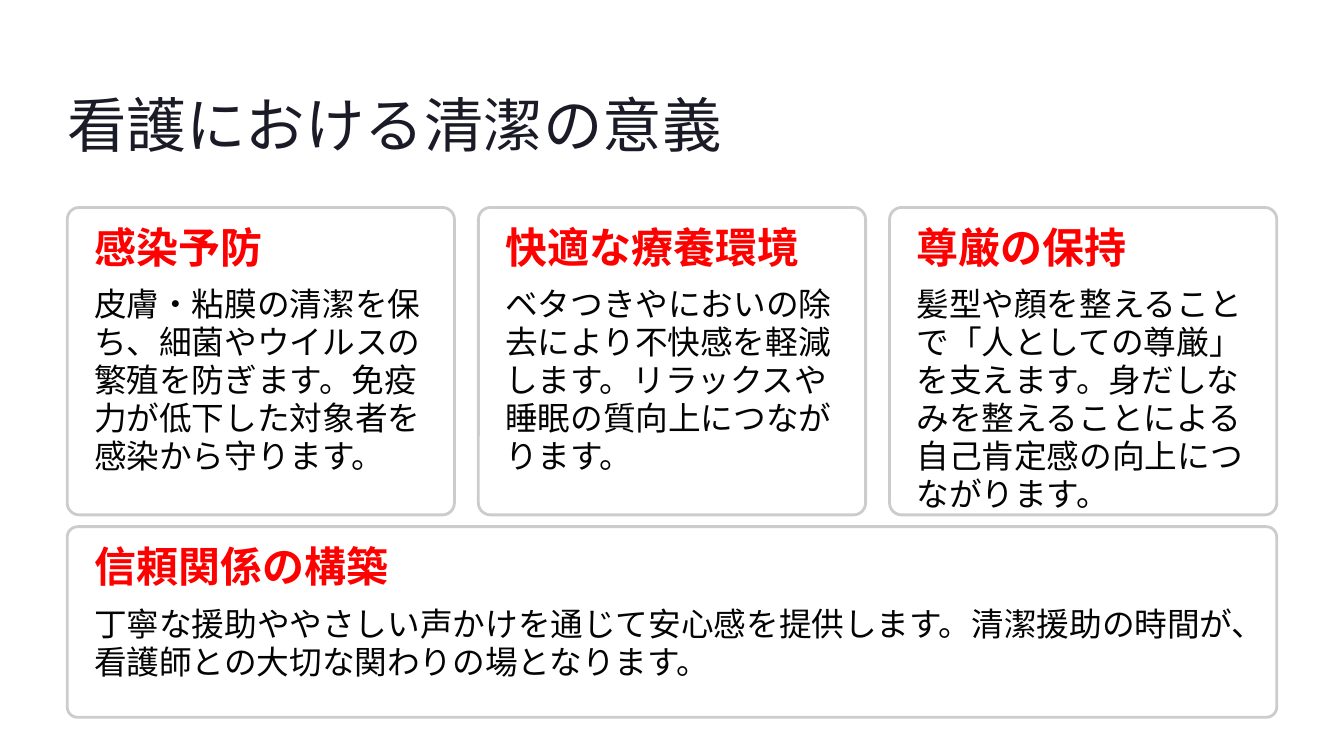
from dataclasses import dataclass
from lxml.etree import SubElement
from pptx import Presentation
from pptx.dml.color import RGBColor
from pptx.enum.shapes import MSO_SHAPE
from pptx.oxml.ns import qn
from pptx.util import Inches, Pt


@dataclass
class Theme:
    ink: str = "1B1B27"
    red: str = "FF0000"
    body: str = "030303"
    edge: str = "CCCCCC"
    card: str = "FFFFFF"
    title_size: int = 51
    head_size: int = 36
    body_size: int = 28
    head_font: str = "Inter"
    body_font: str = "Karla"


theme = Theme()
deck = Presentation()
deck.slide_width, deck.slide_height = Inches(16), Inches(9)
slide = deck.slides.add_slide(deck.slide_layouts[6])


def add_text(text, left, top, width, height, font, size, color, lead, bold=False, wrap=False):
    box = slide.shapes.add_textbox(Inches(left), Inches(top), Inches(width), Inches(height))
    frame = box.text_frame
    frame.margin_left = frame.margin_top = frame.margin_right = frame.margin_bottom = 0
    frame.word_wrap = wrap
    frame.text = text
    line = frame.paragraphs[0]
    line.line_spacing = Pt(lead)
    style = line.runs[0].font
    style.name, style.size, style.bold = font, Pt(size), bold
    style.color.rgb = RGBColor.from_string(color)


def add_card(head, body, left, top, width, height, curve, rows):
    card = slide.shapes.add_shape(
        MSO_SHAPE.ROUNDED_RECTANGLE, Inches(left), Inches(top), Inches(width), Inches(height))
    card.adjustments[0] = curve
    card.shadow.inherit = False
    card.fill.solid()
    card.fill.fore_color.rgb = RGBColor.from_string(theme.card)
    tone = card.fill._xPr.find(qn("a:solidFill"))[0]
    SubElement(tone, qn("a:alpha"), val="95000")
    card.line.color.rgb = RGBColor.from_string(theme.edge)
    card.line.width = Pt(2.4)
    add_text(head, left + 0.32, top + 0.32, 3.56, 0.45,
             theme.head_font, theme.head_size, theme.red, 32, bold=True)
    add_text(body, left + 0.32, top + 0.93, width - 0.63, rows,
             theme.body_font, theme.body_size, theme.body, 32.5, wrap=True)


add_text("看護における清潔の意義", 0.8, 1.01, 7.83, 0.89,
         theme.head_font, theme.title_size, theme.ink, 64)

cards = [
    ("感染予防", "皮膚・粘膜の清潔を保ち、細菌やウイルスの繁殖を防ぎます。免疫力が低下した対象者を感染から守ります。"),
    ("快適な療養環境", "ベタつきやにおいの除去により不快感を軽減します。リラックスや睡眠の質向上につながります。"),
    ("尊厳の保持", "髪型や顔を整えることで「人としての尊厳」を支えます。身だしなみを整えることによる自己肯定感の向上につながります。"),
]
width, gap = 4.61, 0.285
for index, (head, body) in enumerate(cards):
    add_card(head, body, 0.8 + index * (width + gap), 2.47, width, 3.66, 0.039, 1.82)

add_card("信頼関係の構築",
         "丁寧な援助ややさしい声かけを通じて安心感を提供します。清潔援助の時間が、看護師との大切な関わりの場となります。",
         0.8, 6.27, 14.4, 2.27, 0.055, 0.91)

deck.save("out.pptx")
